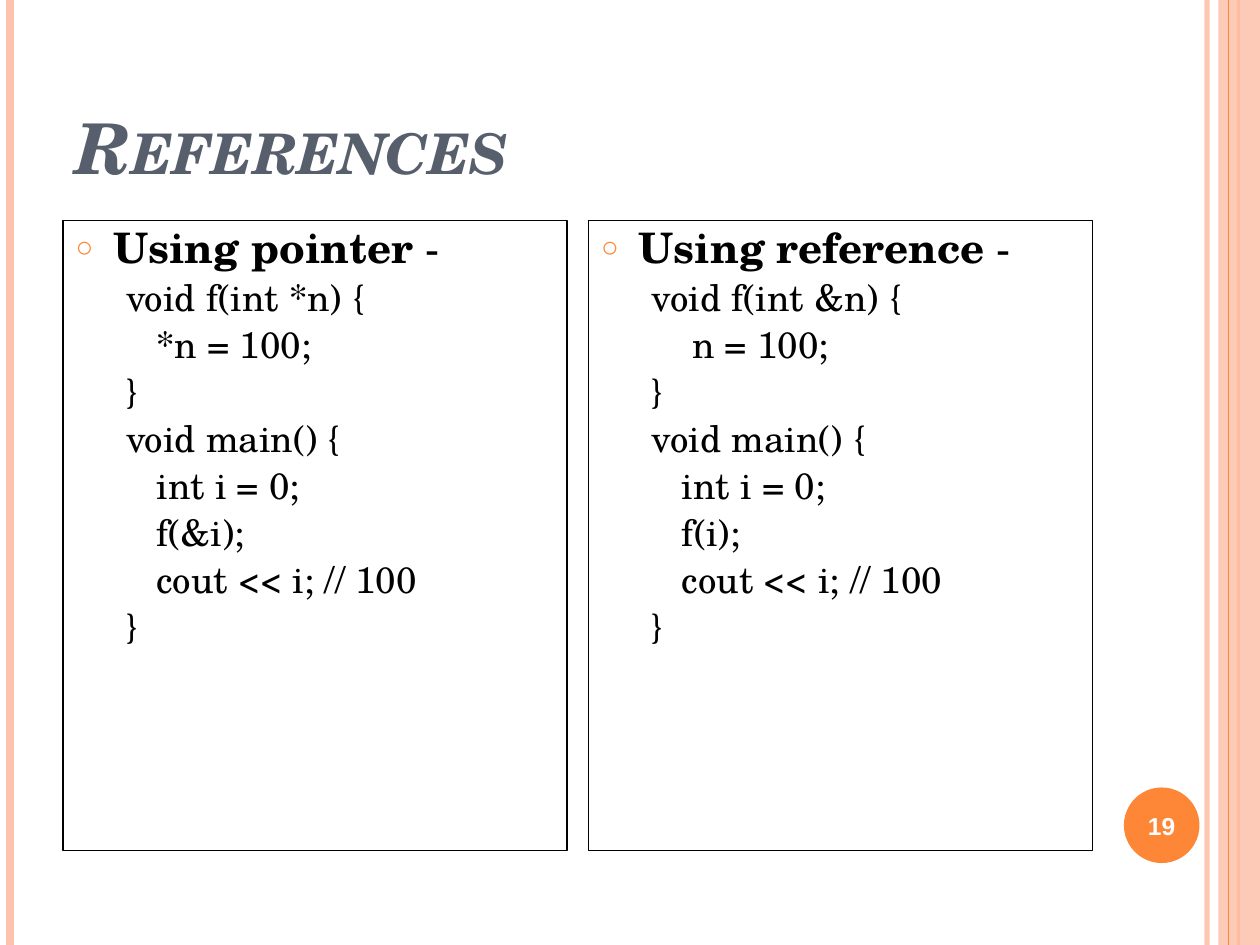
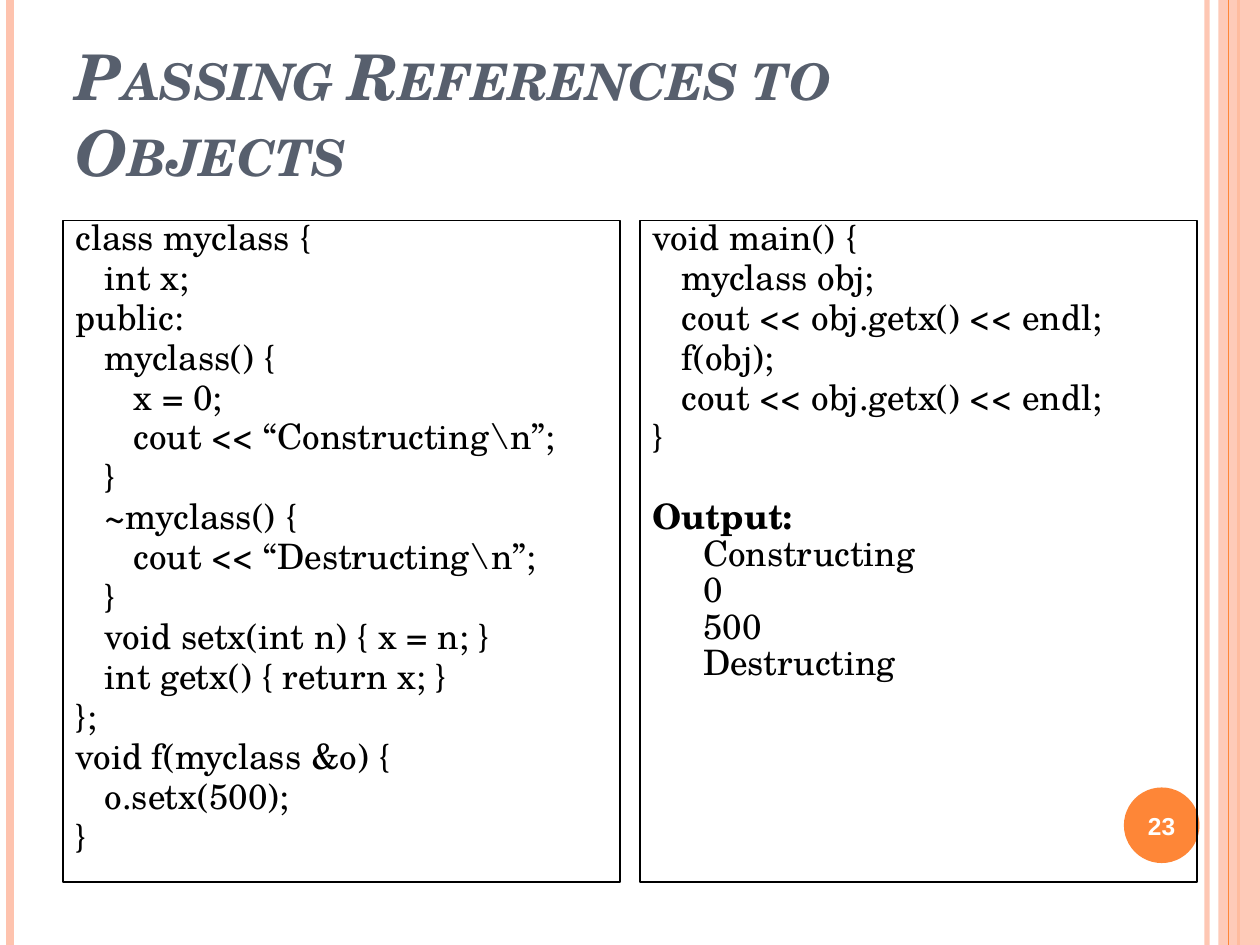
from lxml import etree
from pptx import Presentation
from pptx.dml.color import RGBColor
from pptx.enum.shapes import MSO_CONNECTOR, MSO_SHAPE
from pptx.enum.text import MSO_ANCHOR, MSO_AUTO_SIZE, PP_ALIGN
from pptx.oxml.ns import qn
from pptx.util import Inches, Pt

COLORS = {"pale": "FEC3AE", "orange": "FE8637", "slate": "575F6D",
          "black": "000000", "white": "FFFFFF"}
SERIF, SANS = "TeX Gyre Schola", "Arial"
LEFT, BODY_TOP = 0.5, 1.75
BLOCK_INDENT = 0.4      # inches, code or output under a heading
CODE_STEP = 0.83        # one code level, in ems

# Code lines are (level, text)
POINTER_CODE = [
    (0, "void f(int *n) {"), (1, "*n = 100;"), (0, "}"),
    (0, "void main() {"), (1, "int i = 0;"), (1, "f(&i);"),
    (1, "cout << i; // 100"), (0, "}"),
]
REFERENCE_CODE = [
    (0, "void f(int &n) {"), (1.33, "n = 100;"), (0, "}"),
    (0, "void main() {"), (1, "int i = 0;"), (1, "f(i);"),
    (1, "cout << i; // 100"), (0, "}"),
]
CLASS_CODE = [
    (0, "class myclass {"), (1, "int x;"), (0, "public:"),
    (1, "myclass() {"), (2, "x = 0;"), (2, "cout << “Constructing\\n”;"), (1, "}"),
    (1, "~myclass() {"), (2, "cout << “Destructing\\n”;"), (1, "}"),
    (1, "void setx(int n) { x = n; }"), (1, "int getx() { return x; }"), (0, "};"),
    (0, "void f(myclass &o) {"), (1, "o.setx(500);"), (0, "}"),
]
MAIN_CODE = [
    (0, "void main() {"), (1, "myclass obj;"), (1, "cout << obj.getx() << endl;"),
    (1, "f(obj);"), (1, "cout << obj.getx() << endl;"), (0, "}"),
]
OUTPUT = [(0, text) for text in ("Constructing", "0", "500", "Destructing")]


def rgb(name):
    return RGBColor.from_string(COLORS[name])


def set_font(font, size, color, name=SERIF, bold=False, italic=False):
    font.name, font.size = name, Pt(size)
    font.bold, font.italic = bold, italic
    font.color.rgb = rgb(color)


def set_opacity(shape, percent):
    color = next(shape._element.spPr.iter(qn("a:srgbClr")))
    etree.SubElement(color, qn("a:alpha"), val=str(percent * 1000))


# Shared decoration
def add_stripe(slide, x, width, color):
    stripe = slide.shapes.add_connector(
        MSO_CONNECTOR.STRAIGHT, Inches(x), 0, Inches(x), Inches(7.5))
    stripe.line.color.rgb = rgb(color)
    stripe.line.width = Pt(width)
    etree.SubElement(stripe._element.spPr, qn("a:effectLst"))
    return stripe


def add_filled_shape(slide, kind, x, y, width, height, color):
    shape = slide.shapes.add_shape(
        kind, Inches(x), Inches(y), Inches(width), Inches(height))
    shape.shadow.inherit = False
    shape.fill.solid()
    shape.fill.fore_color.rgb = rgb(color)
    shape.line.fill.background()
    return shape


def add_decoration(slide, page_number):
    set_opacity(add_stripe(slide, 9.58, 3, "pale"), 93)
    add_stripe(slide, 0.08, 4.5, "pale")
    add_stripe(slide, 9.83, 1.5, "orange")
    band = add_filled_shape(slide, MSO_SHAPE.RECTANGLE, 9.67, 0, 0.33, 7.5, "pale")
    set_opacity(band, 87)
    add_stripe(slide, 9.75, 0.75, "orange")

    badge = add_filled_shape(slide, MSO_SHAPE.OVAL, 8.92, 6.25, 0.6, 0.6, "orange")
    frame = badge.text_frame
    frame.margin_left = frame.margin_right = 0
    frame.vertical_anchor = MSO_ANCHOR.MIDDLE
    paragraph = frame.paragraphs[0]
    paragraph.text = str(page_number)
    paragraph.alignment = PP_ALIGN.CENTER
    set_font(paragraph.font, 14, "white", SANS, bold=True)


# Placeholders
def place(shape, x, y, width, height, anchor):
    shape.left, shape.top = Inches(x), Inches(y)
    shape.width, shape.height = Inches(width), Inches(height)
    shape.text_frame.word_wrap = True
    shape.text_frame.auto_size = MSO_AUTO_SIZE.NONE
    shape.text_frame.vertical_anchor = anchor


def set_title(slide, text, size):
    title = slide.shapes.title
    place(title, LEFT, 0.3, 8.17, 1.25, MSO_ANCHOR.BOTTOM)
    paragraph = title.text_frame.paragraphs[0]
    paragraph.alignment = PP_ALIGN.LEFT
    run = paragraph.add_run()
    run.text = text
    set_font(run.font, size, "slate", bold=True, italic=True)
    run._r.get_or_add_rPr().set("cap", "small")


def set_columns(slide, width, height, gap):
    """Return the text frames of two outlined columns."""
    frames = []
    for column in range(2):
        box = slide.placeholders[column + 1]
        place(box, LEFT + column * (width + gap), BODY_TOP, width, height, MSO_ANCHOR.TOP)
        box.line.color.rgb = rgb("black")
        box.line.width = Pt(0.75)
        slide.shapes._spTree.append(box._element)  # in front of the decoration
        frames.append(box.text_frame)
    return frames


# Paragraphs
def add_paragraph(frame, margin, spacing, before, bullet=False):
    first = frame.paragraphs[0]
    paragraph = frame.add_paragraph() if first.runs else first
    properties = paragraph._p.get_or_add_pPr()
    properties.set("marL", str(int(margin)))
    properties.set("indent", str(-int(margin) if bullet else 0))
    if bullet:
        color = etree.SubElement(properties, qn("a:buClr"))
        etree.SubElement(color, qn("a:srgbClr"), val=COLORS["orange"])
        etree.SubElement(properties, qn("a:buSzPct"), val="70000")
        etree.SubElement(properties, qn("a:buChar"), char="○")
    else:
        etree.SubElement(properties, qn("a:buNone"))
    paragraph.line_spacing = spacing
    paragraph.space_before = Pt(before)
    return paragraph


def add_lines(frame, lines, size, spacing, before, base=0):
    for level, text in lines:
        margin = Inches(base) + Pt(level * CODE_STEP * size)
        paragraph = add_paragraph(frame, margin, spacing, before)
        paragraph.add_run().text = text
        set_font(paragraph.font, size, "black")


def add_bullet_heading(frame, text):
    paragraph = add_paragraph(frame, Inches(0.3), 0.9, 6, bullet=True)
    for part, bold in ((text + " ", True), ("-", False)):
        run = paragraph.add_run()
        run.text = part
        set_font(run.font, 24, "black", bold=bold)


def add_output(frame, lines):
    heading = add_paragraph(frame, 0, 0.7, 28.8)
    heading.add_run().text = "Output:"
    set_font(heading.font, 20, "black", bold=True)
    add_lines(frame, lines, 20, 0.7, 4, BLOCK_INDENT)


# Slides
def add_base_slide(presentation, title, title_size, page_number):
    slide = presentation.slides.add_slide(presentation.slide_layouts[3])
    set_title(slide, title, title_size)
    add_decoration(slide, page_number)
    return slide


def add_references_slide(presentation):
    slide = add_base_slide(presentation, "References", 40, 19)
    columns = (("Using pointer", POINTER_CODE), ("Using reference", REFERENCE_CODE))
    for frame, (heading, code) in zip(set_columns(slide, 4, 5, 0.17), columns):
        add_bullet_heading(frame, heading)
        add_lines(frame, code, 21, 0.9, 4.2, BLOCK_INDENT)


def add_objects_slide(presentation):
    slide = add_base_slide(presentation, "Passing References to Objects", 36, 23)
    left, right = set_columns(slide, 4.42, 5.25, 0.16)
    add_lines(left, CLASS_CODE, 20, 0.7, 6)
    add_lines(right, MAIN_CODE, 20, 0.7, 6)
    add_output(right, OUTPUT)


def main():
    presentation = Presentation()
    presentation.slide_width, presentation.slide_height = Inches(10), Inches(7.5)
    add_references_slide(presentation)
    add_objects_slide(presentation)
    presentation.save("out.pptx")


if __name__ == "__main__":
    main()
